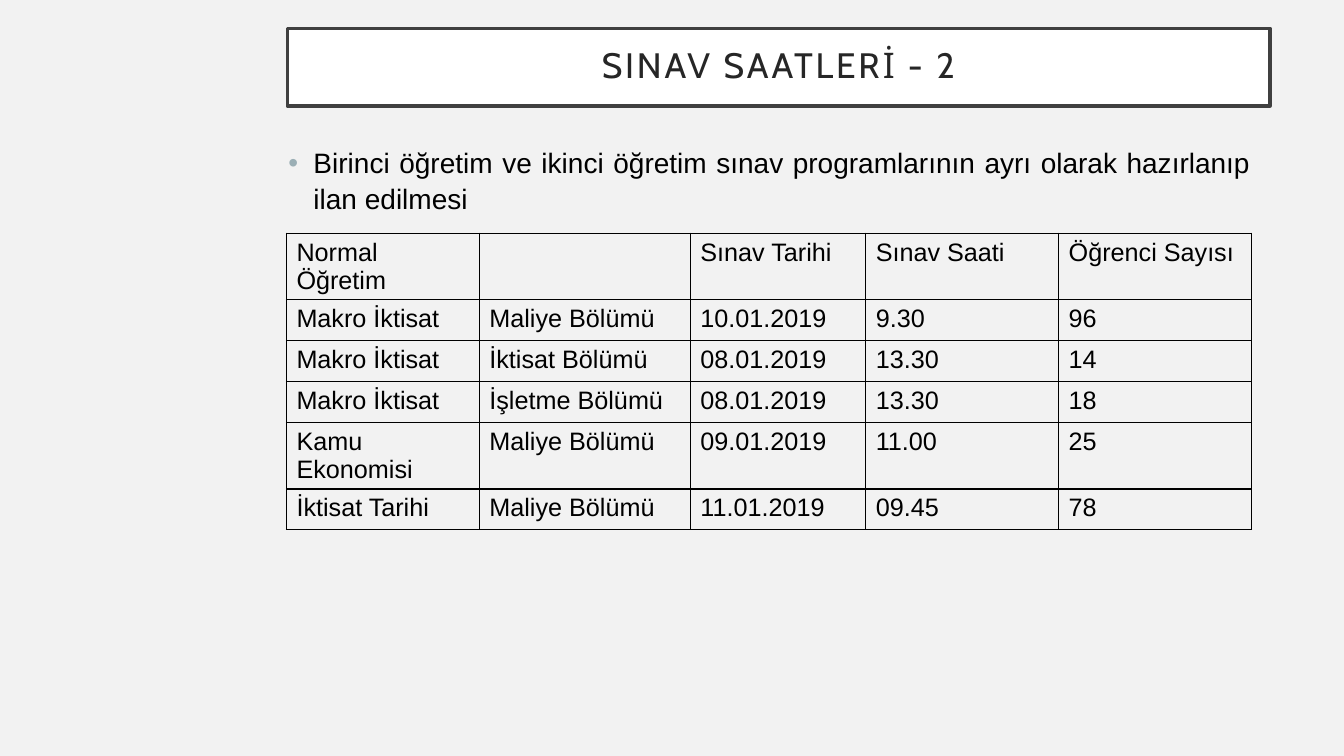
"""Build the exam timetable slide with its title, bullet and table."""
from typing import Any, NamedTuple

from lxml.etree import SubElement as Sub
from pptx import Presentation as Deck
from pptx.dml.color import RGBColor as Rgb
from pptx.enum.text import MSO_ANCHOR as Anchor, MSO_AUTO_SIZE as Fit, PP_ALIGN as Align
from pptx.oxml.ns import qn
from pptx.util import Pt


class Exam(NamedTuple):
    course: str
    dept: str
    date: str
    hour: str
    count: str


class Box(NamedTuple):
    left: float
    top: float
    width: float
    height: float


EXAMS = [
    Exam("Normal Öğretim", "", "Sınav Tarihi", "Sınav Saati", "Öğrenci Sayısı"),
    Exam("Makro İktisat", "Maliye Bölümü", "10.01.2019", "9.30", "96"),
    Exam("Makro İktisat", "İktisat Bölümü", "08.01.2019", "13.30", "14"),
    Exam("Makro İktisat", "İşletme Bölümü", "08.01.2019", "13.30", "18"),
    Exam("Kamu Ekonomisi", "Maliye Bölümü", "09.01.2019", "11.00", "25"),
    Exam("İktisat Tarihi", "Maliye Bölümü", "11.01.2019", "09.45", "78"),
]
WIDTHS = [137.8, 150.7, 125.3, 137.8, 137.8]
ROW = 29.2
GRID = Box(204.6, 166.6, sum(WIDTHS), ROW * len(EXAMS))


def tint(code: str) -> Rgb:
    return Rgb.from_string(code)


def apply(item: Any, form: dict[str, Any]) -> None:
    for name, value in form.items():
        setattr(item, name, value)


def place(shape: Any, box: Box) -> None:
    apply(shape, {name: Pt(value) for name, value in box._asdict().items()})


def write(para: Any, text: str, face: str, size: float, color: str) -> Any:
    run = para.add_run()
    run.text = text
    apply(run.font, {"name": face, "size": Pt(size), "bold": False})
    run.font.color.rgb = tint(color)
    return run


def add_title(slide: Any) -> None:
    title = slide.shapes.title
    place(title, Box(205.2, 20.2, 702, 55.4))
    title.fill.solid()
    title.fill.fore_color.rgb = tint("FFFFFF")
    title.line.color.rgb = tint("404040")
    title.line.width = Pt(2.5)
    frame = title.text_frame
    apply(frame, {"vertical_anchor": Anchor.MIDDLE, "word_wrap": True, "auto_size": Fit.NONE})
    apply(frame, {f"margin_{side}": Pt(14.4) for side in ("left", "top", "right", "bottom")})
    para = frame.paragraphs[0]
    apply(para, {"alignment": Align.CENTER, "line_spacing": 0.9})
    run = write(para, "SINAV SAATLERİ - 2", "Cabin", 25.2, "262626")
    run.font._element.set("spc", "200")


def add_body(slide: Any) -> None:
    body = slide.placeholders[1]
    place(body, Box(198.7, 99.4, 702, 59.8))
    frame = body.text_frame
    apply(frame, {"vertical_anchor": Anchor.TOP, "word_wrap": True, "auto_size": Fit.NONE})
    para = frame.paragraphs[0]
    props = para._p.get_or_add_pPr()
    props.set("marL", str(Pt(18)))
    props.set("indent", str(Pt(-18)))
    Sub(Sub(props, qn("a:buClr")), qn("a:srgbClr"), val="9BAFB5")
    Sub(props, qn("a:buFont"), typeface="Arial")
    Sub(props, qn("a:buChar"), char="•")
    apply(para, {"alignment": Align.JUSTIFY, "line_spacing": 1.05, "space_before": Pt(0)})
    text = "Birinci öğretim ve ikinci öğretim sınav programlarının ayrı olarak hazırlanıp ilan edilmesi"
    write(para, text, "Arial", 20, "000000")


def edge(cell: Any) -> None:
    props = cell._tc.get_or_add_tcPr()
    for spot, side in enumerate(("lnL", "lnR", "lnT", "lnB")):
        line = props.makeelement(qn(f"a:{side}"), {"w": str(Pt(1))})
        Sub(Sub(line, qn("a:solidFill")), qn("a:srgbClr"), val="000000")
        props.insert(spot, line)


def add_grid(slide: Any) -> None:
    table = slide.shapes.add_table(len(EXAMS), len(WIDTHS), *map(Pt, GRID)).table
    apply(table, {"first_row": False, "horz_banding": False})
    for col, width in zip(table.columns, WIDTHS):
        col.width = Pt(width)
    for row, exam in zip(table.rows, EXAMS):
        row.height = Pt(ROW)
        for cell, text in zip(row.cells, exam):
            cell.fill.background()
            edge(cell)
            if text:
                write(cell.text_frame.paragraphs[0], text, "Arial", 18, "000000")


def main() -> None:
    deck = Deck()
    apply(deck, {"slide_width": Pt(960), "slide_height": Pt(540)})
    slide = deck.slides.add_slide(deck.slide_layouts[1])
    slide.background.fill.solid()
    slide.background.fill.fore_color.rgb = tint("F2F2F2")
    add_title(slide)
    add_body(slide)
    add_grid(slide)
    deck.save("out.pptx")


if __name__ == "__main__":
    main()
